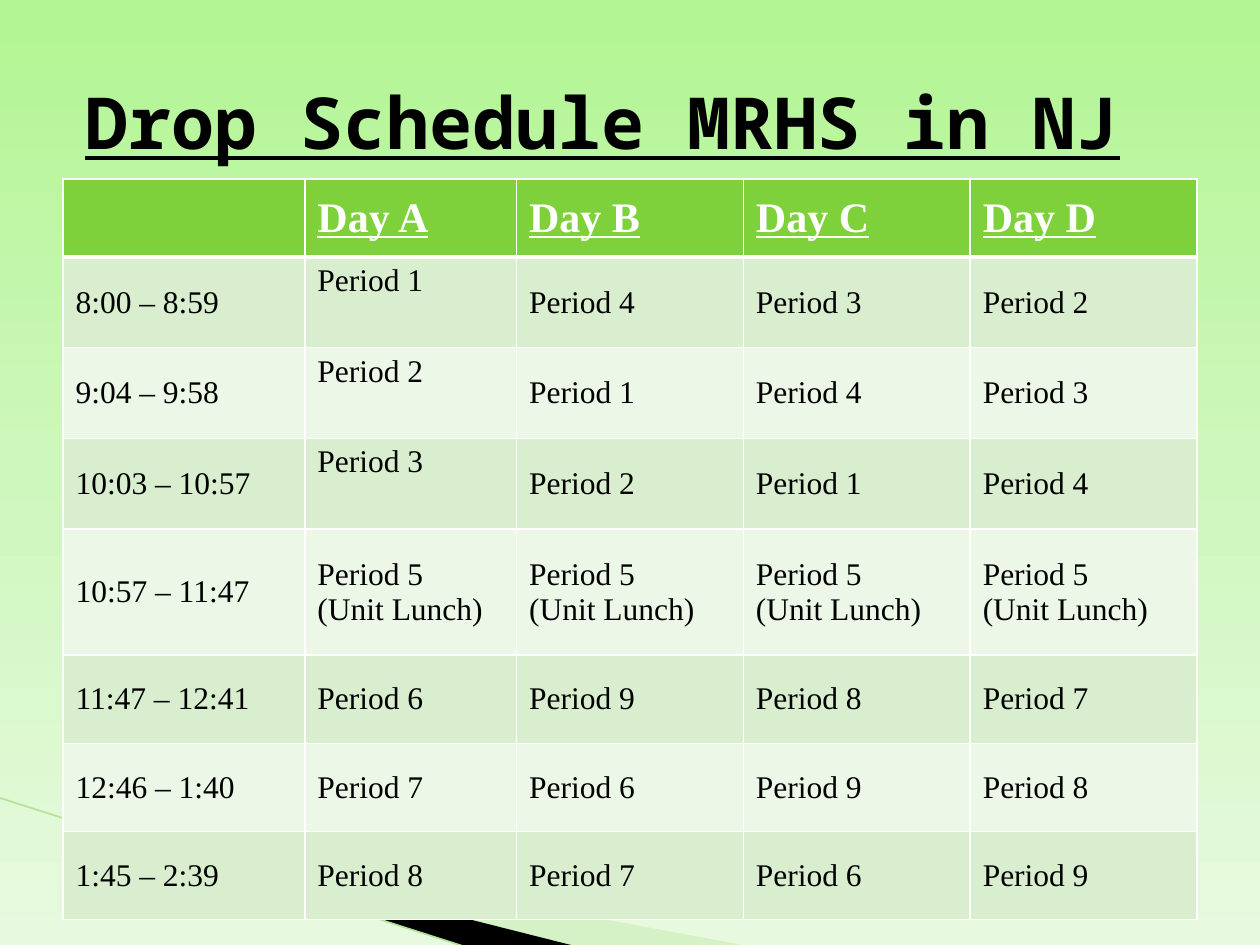
from copy import deepcopy

from lxml.etree import SubElement
from pptx import Presentation
from pptx.dml.color import RGBColor
from pptx.enum.shapes import MSO_CONNECTOR
from pptx.enum.text import MSO_ANCHOR
from pptx.oxml.ns import qn
from pptx.util import Inches, Pt

# Content
TITLE = "Drop Schedule MRHS in NJ"
DAYS = ["", "Day A", "Day B", "Day C", "Day D"]
LUNCH = "Period 5\n(Unit Lunch)"
SCHEDULE = [  # time, then the period met on each day
    ("8:00 – 8:59", 1, 4, 3, 2),
    ("9:04 – 9:58", 2, 1, 4, 3),
    ("10:03 – 10:57", 3, 2, 1, 4),
    ("10:57 – 11:47", LUNCH, LUNCH, LUNCH, LUNCH),
    ("11:47 – 12:41", 6, 9, 8, 7),
    ("12:46 – 1:40", 7, 6, 9, 8),
    ("1:45 – 2:39", 8, 7, 6, 9),
]
COLUMN_WIDTHS = [1.92, 1.68, 1.8, 1.8, 1.8]
ROW_HEIGHTS = [0.62] + [0.72] * 3 + [1] + [0.7] * 3
MORNING_ROWS = (1, 2, 3)  # Day A sits at the top of these rows


class Theme:
    title_font, table_font = "Noto Sans Mono", "Times New Roman"
    title_size, header_size, body_size = 41, 24, 18
    ink, white = "000000", "FFFFFF"
    header, bands = "7FD13B", ("D8EECE", "ECF7E8")
    backdrop = [(0, "B2F592"), (0.5, "CEF7BD"), (1, "E7FADF")]
    ribbon, ribbon_opacity, edge = "B8E7A1", 40, "B1E399"


def rgb(color):
    return RGBColor.from_string(color)


def write(frame, text, *, font, size, color, bold=False, underline=False):
    for index, line in enumerate(text.split("\n")):
        paragraph = frame.add_paragraph() if index else frame.paragraphs[0]
        run = paragraph.add_run()
        run.text = line
        run.font.name, run.font.size = font, Pt(size)
        run.font.bold, run.font.underline = bold, underline
        run.font.color.rgb = rgb(color)


def draw_ribbon(slide, points, color, opacity=100):
    corners = [(Inches(x), Inches(y)) for x, y in points]
    builder = slide.shapes.build_freeform(*corners[0])
    builder.add_line_segments(corners[1:], close=True)
    ribbon = builder.convert_to_shape()
    ribbon.shadow.inherit = False
    ribbon.line.fill.background()
    ribbon.fill.solid()
    ribbon.fill.fore_color.rgb = rgb(color)
    if opacity < 100:
        tint = ribbon._element.spPr.find(qn("a:solidFill"))[0]
        SubElement(tint, qn("a:alpha"), val=str(opacity * 1000))


def set_borders(cell, **widths):
    properties = cell._tc.get_or_add_tcPr()
    for index, side in enumerate("LRTB"):
        border = properties.makeelement(
            qn(f"a:ln{side}"), {"w": str(Pt(widths.get(side, 1)))})
        paint = SubElement(border, qn("a:solidFill"))
        SubElement(paint, qn("a:srgbClr"), val=Theme.white)
        properties.insert(index, border)


def paint_backdrop(slide):
    fill = slide.background.fill
    fill.gradient()
    fill.gradient_angle = 270
    stops = slide._element.find(".//" + qn("a:gsLst"))
    stops.append(deepcopy(stops[0]))
    for stop, (position, color) in zip(fill.gradient_stops, Theme.backdrop):
        stop.position = position
        stop.color.rgb = rgb(color)


def add_schedule(slide):
    rows = [DAYS] + [
        [entry if isinstance(entry, str) else f"Period {entry}" for entry in row]
        for row in SCHEDULE
    ]
    schedule = slide.shapes.add_table(
        len(rows), len(DAYS), Inches(0.5), Inches(1.42),
        Inches(sum(COLUMN_WIDTHS)), Inches(sum(ROW_HEIGHTS))).table
    for column, width in zip(schedule.columns, COLUMN_WIDTHS):
        column.width = Inches(width)
    for r, row in enumerate(rows):
        schedule.rows[r].height = Inches(ROW_HEIGHTS[r])
        is_header = r == 0
        for c, entry in enumerate(row):
            cell = schedule.cell(r, c)
            at_top = c == 1 and r in MORNING_ROWS
            cell.vertical_anchor = MSO_ANCHOR.TOP if at_top else MSO_ANCHOR.MIDDLE
            cell.fill.solid()
            cell.fill.fore_color.rgb = rgb(
                Theme.header if is_header else Theme.bands[(r - 1) % 2])
            set_borders(cell, B=3 if is_header else 1, T=3 if r == 1 else 1)
            if entry:
                write(cell.text_frame, entry, font=Theme.table_font,
                      size=Theme.header_size if is_header else Theme.body_size,
                      color=Theme.white if is_header else Theme.ink,
                      bold=is_header, underline=is_header)


def main():
    deck = Presentation()
    deck.slide_width, deck.slide_height = Inches(10), Inches(7.5)
    slide = deck.slides.add_slide(deck.slide_layouts[6])
    paint_backdrop(slide)

    # Ribbons and edge line behind the table
    draw_ribbon(slide, [(0.55, 6.51), (5.95, 7.51), (4.56, 7.51), (0.55, 6.5)],
                Theme.ribbon, Theme.ribbon_opacity)
    draw_ribbon(slide, [(0.53, 6.49), (4.57, 7.51), (3.72, 7.52), (0.54, 6.5)],
                Theme.ink)
    edge = slide.shapes.add_connector(
        MSO_CONNECTOR.STRAIGHT, Inches(-0.01), Inches(6.33), Inches(3.71), Inches(7.52))
    edge.line.color.rgb = rgb(Theme.edge)
    edge.line.width = Pt(0.95)
    SubElement(edge._element.spPr, qn("a:effectLst"))

    # Title
    heading = slide.shapes.add_textbox(
        Inches(0.58), Inches(0.33), Inches(9), Inches(1.25)).text_frame
    heading.word_wrap = True
    heading.vertical_anchor = MSO_ANCHOR.MIDDLE
    write(heading, TITLE, font=Theme.title_font, size=Theme.title_size,
          color=Theme.ink, bold=True, underline=True)

    add_schedule(slide)
    deck.save("out.pptx")


if __name__ == "__main__":
    main()
